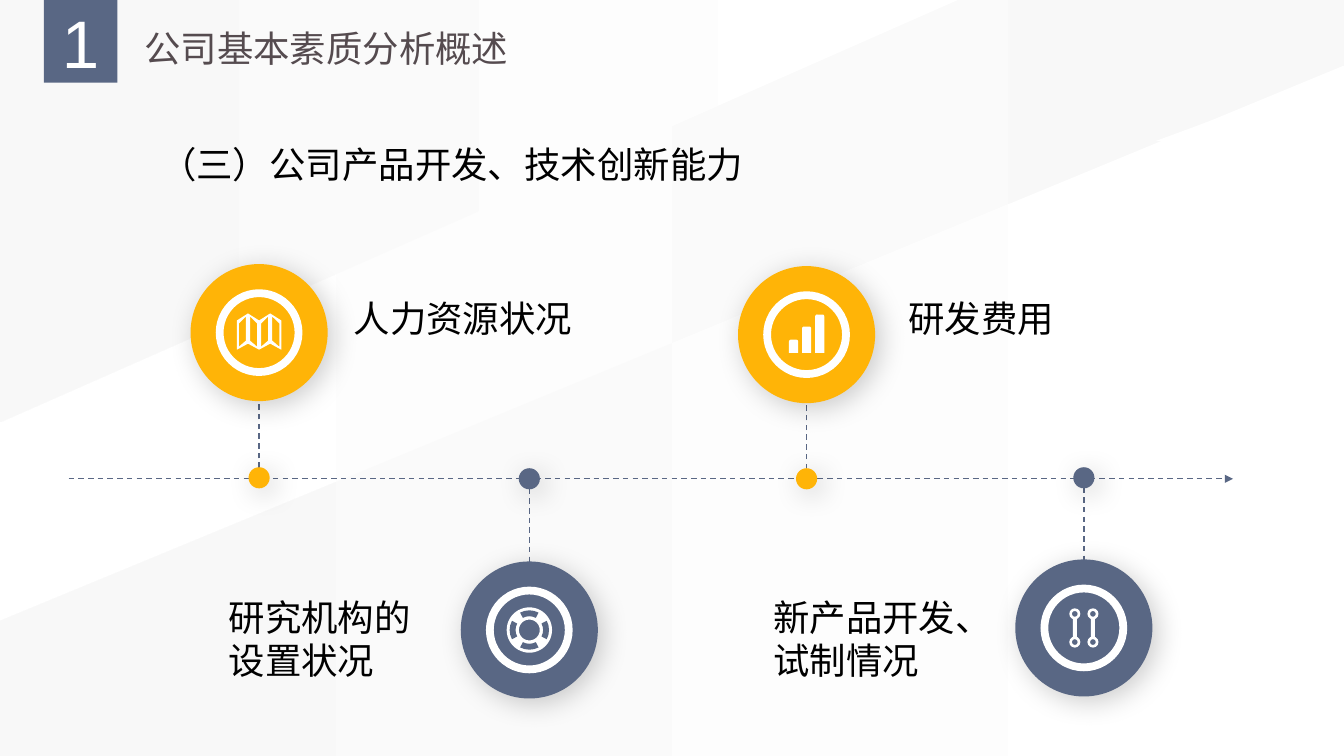
"""Build a timeline slide on product development and technical innovation."""
from lxml import etree
from pptx import Presentation
from pptx.dml.color import RGBColor
from pptx.enum.dml import MSO_LINE
from pptx.enum.shapes import MSO_CONNECTOR, MSO_SHAPE
from pptx.enum.text import MSO_ANCHOR, MSO_AUTO_SIZE, PP_ALIGN
from pptx.oxml.ns import qn
from pptx.util import Inches, Pt

OVAL, DONUT, BLOCK_ARC = MSO_SHAPE.OVAL, MSO_SHAPE.DONUT, MSO_SHAPE.BLOCK_ARC
RECT, ROUND_TOP = MSO_SHAPE.RECTANGLE, MSO_SHAPE.ROUND_2_SAME_RECTANGLE
STRAIGHT, DASH = MSO_CONNECTOR.STRAIGHT, MSO_LINE.DASH
LEFT, CENTER, JUSTIFY = PP_ALIGN.LEFT, PP_ALIGN.CENTER, PP_ALIGN.JUSTIFY
TOP, MIDDLE = MSO_ANCHOR.TOP, MSO_ANCHOR.MIDDLE

WHITE = RGBColor(0xFF, 0xFF, 0xFF)
MIST = RGBColor(0xF8, 0xF8, 0xF8)
SLATE = RGBColor(0x59, 0x67, 0x84)
AMBER = RGBColor(0xFF, 0xB4, 0x07)
TITLE_GREY = RGBColor(0x55, 0x4B, 0x4F)
BLACK = RGBColor(0, 0, 0)
CJK = "Noto Sans CJK SC"
W, H = 13.33, 7.5
DISC, DOT, RING = 1.36, 0.21, 0.86
AXIS_Y = 4.75


def centred(kind, x, y, width, height, color, *adjustments):
    shape = slide.shapes.add_shape(kind, Inches(x - width / 2), Inches(y - height / 2),
                                   Inches(width), Inches(height))
    shape.shadow.inherit = False
    shape.fill.solid()
    shape.fill.fore_color.rgb = color
    shape.line.fill.background()
    for index, value in enumerate(adjustments):
        shape.adjustments[index] = value
    return shape


def write(frame, text, size, color, font=CJK, align=LEFT, anchor=TOP, wrap=True):
    frame.word_wrap = wrap
    frame.auto_size = MSO_AUTO_SIZE.NONE
    frame.vertical_anchor = anchor
    paragraph = frame.paragraphs[0]
    paragraph.alignment = align
    run = paragraph.add_run()
    run.text = text
    run.font.size = Pt(size)
    run.font.color.rgb = color
    run.font.name = font
    etree.SubElement(run.font._element, qn("a:ea"), typeface=font)
    return paragraph


prs = Presentation()
prs.slide_width, prs.slide_height = Inches(W), Inches(H)
slide = prs.slides.add_slide(prs.slide_layouts[5])

backdrop = [
    ([(0, 0), (W, 0), (W, H), (0, H)], MIST, WHITE),
    ([(0, 0), (9.5, 0), (0, 4.19)], WHITE, MIST),
    ([(0, 6.16), (W, 0.65), (W, H), (0, H)], WHITE, MIST),
    ([(11.46, 1.4), (W, 0.71), (W, 1.4)], WHITE, WHITE),
]
for corners, right_color, left_color in backdrop:
    points = [(Inches(x), Inches(y)) for x, y in corners]
    builder = slide.shapes.build_freeform(*points[0])
    builder.add_line_segments(points[1:])
    facet = builder.convert_to_shape()
    facet.shadow.inherit = False
    facet.line.fill.background()
    facet.fill.gradient()
    facet.fill.gradient_angle = 180
    for stop, color in zip(facet.fill.gradient_stops, (right_color, left_color)):
        stop.color.rgb = color

title = slide.shapes.title
title.element.getparent().append(title.element)
title.left, title.top = Inches(1.33), Inches(0.08)
title.width, title.height = Inches(3.85), Inches(0.62)
write(title.text_frame, "公司基本素质分析概述", 26, TITLE_GREY, wrap=False).line_spacing = 1.3

chapter = centred(RECT, 0.8, 0.41, 0.73, 0.82, SLATE).text_frame
chapter.margin_left = chapter.margin_right = chapter.margin_top = chapter.margin_bottom = 0
write(chapter, "1", 48, WHITE, "Arial", CENTER, MIDDLE)

milestones = [
    (2.57, 3.3, 4.74, AMBER),
    (5.25, 6.25, 4.75, SLATE),
    (8, 3.32, 4.75, AMBER),
    (10.75, 6.23, 4.74, SLATE),
]
lines = [(0.68, AXIS_Y, 12.23, AXIS_Y)]
lines += [(x, dot_y, x, disc_y) for x, disc_y, dot_y, color in milestones]
for ends in lines:
    dashed = slide.shapes.add_connector(STRAIGHT, *[Inches(end) for end in ends])
    dashed.line.color.rgb = SLATE
    dashed.line.width = Pt(1)
    dashed.line.dash_style = DASH
    if ends[1] == ends[3]:
        etree.SubElement(dashed.line._get_or_add_ln(), qn("a:tailEnd"), type="triangle")
    etree.SubElement(dashed.element.spPr, qn("a:effectLst"))

for x, disc_y, dot_y, color in milestones:
    for y, size in ((disc_y, DISC), (dot_y, DOT)):
        disc = centred(OVAL, x, y, size, size, color)
        shadow = etree.SubElement(disc.element.spPr.find(qn("a:effectLst")), qn("a:outerShdw"),
                                  blurRad=str(Pt(20)), dist=str(Pt(5)), dir="2700000",
                                  algn="tl", rotWithShape="0")
        shade = etree.SubElement(shadow, qn("a:srgbClr"), val="000000")
        etree.SubElement(shade, qn("a:alpha"), val="20000")
    centred(DONUT, x, disc_y, RING, RING, WHITE, 0.09)

(map_x, map_y), (buoy_x, buoy_y), (bars_x, bars_y), (tools_x, tools_y) = [m[:2] for m in milestones]

FOLD = 0.11
folds = [map_x + FOLD * step for step in range(-2, 3)]
tops = [map_y - (0.12, 0.19)[i % 2] for i in range(5)]
bottoms = [map_y + (0.17, 0.11)[i % 2] for i in range(5)]
contours = [list(zip(folds, tops)) + list(zip(folds, bottoms))[::-1]]
for i in range(4):
    near, far = folds[i] + 0.02, folds[i + 1] - 0.02
    contours.append([(near, tops[i] + 0.03), (far, tops[i + 1] + 0.03),
                     (far, bottoms[i + 1] - 0.03), (near, bottoms[i] - 0.03)])
map_builder = slide.shapes.build_freeform(Inches(folds[0]), Inches(tops[0]))
for contour in contours:
    points = [(Inches(x), Inches(y)) for x, y in contour]
    map_builder.move_to(*points[0])
    map_builder.add_line_segments(points[1:])
folded_map = map_builder.convert_to_shape()
folded_map.shadow.inherit = False
folded_map.fill.solid()
folded_map.fill.fore_color.rgb = WHITE
folded_map.line.fill.background()

centred(DONUT, buoy_x, buoy_y, 0.45, 0.45, WHITE, 0.27)
for angle in range(0, 360, 90):
    start, end = (angle - 28) % 360, (angle + 28) % 360
    centred(BLOCK_ARC, buoy_x, buoy_y, 0.39, 0.39, SLATE, start * 0.6, end * 0.6, 0.15)

for column, height in enumerate((0.13, 0.26, 0.38)):
    centred(ROUND_TOP, bars_x + 0.13 * (column - 1), bars_y + 0.18 - height / 2,
            0.09, height, WHITE, 0.2)

for x in (tools_x - 0.09, tools_x + 0.09):
    centred(RECT, x, tools_y, 0.04, 0.19, WHITE)
    for y in (tools_y - 0.14, tools_y + 0.14):
        centred(DONUT, x, y, 0.11, 0.11, WHITE, 0.24)

captions = [
    ("人力资源状况", 3.41, 2.89, 2.52, 0.54),
    ("研发费用", 8.91, 2.89, 1.84, 0.54),
    ("研究机构的设置状况", 2.17, 5.85, 2.13, 0.98),
    ("新产品开发、试制情况", 7.57, 5.85, 2.22, 0.98),
]
for caption, *box in captions:
    label = slide.shapes.add_textbox(*[Inches(length) for length in box])
    write(label.text_frame, caption, 26, BLACK)

section = slide.shapes.add_textbox(Inches(0.82), Inches(1.36), Inches(7.33), Inches(0.54))
heading = write(section.text_frame, "（三）公司产品开发、技术创新能力", 26, BLACK, align=JUSTIFY)
heading.space_after = Pt(6)
heading._p.get_or_add_pPr().set("indent", str(Inches(0.67)))

prs.save("out.pptx")
